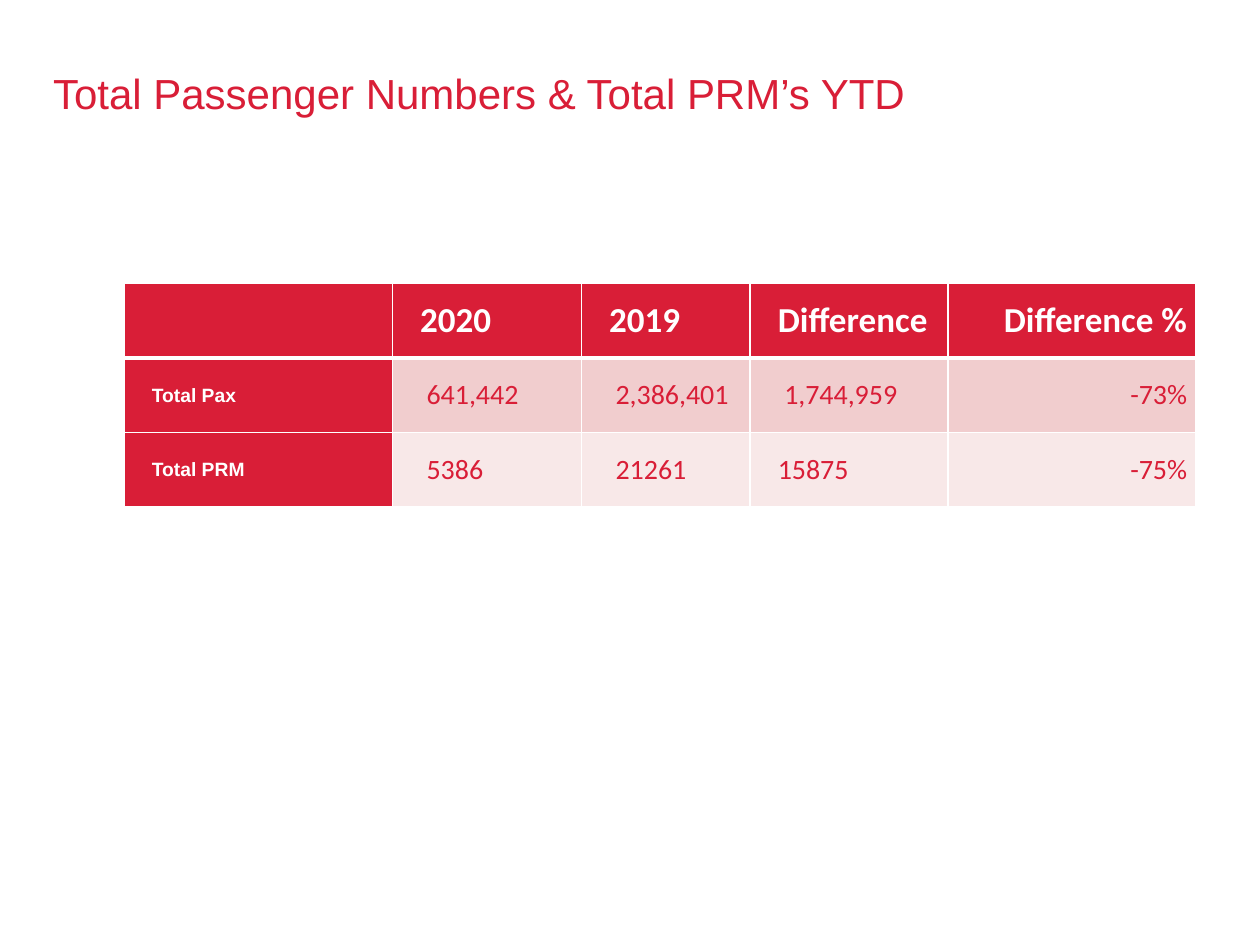
from dataclasses import dataclass

from lxml.etree import SubElement
from pptx import Presentation
from pptx.dml.color import RGBColor as Color
from pptx.enum.text import MSO_ANCHOR as Anchor, PP_ALIGN as Align
from pptx.oxml.ns import qn
from pptx.util import Cm, Pt


@dataclass(frozen=True)
class Theme:
    red: str = "D91E37"
    white: str = "FFFFFF"
    bands: tuple = ("F1CDCE", "F8E8E8")
    title_font: str = "Arial"
    table_font: str = "Calibri"
    title_size: int = 24
    header_size: int = 20
    label_size: int = 11
    value_size: int = 16
    thin_line: int = 1
    thick_line: int = 3


THEME = Theme()
TITLE = "Total Passenger Numbers & Total PRM’s YTD"
HEADERS = ("", "2020", "2019", "Difference", "Difference %")
ROWS = (
    ("Total Pax", "641,442", "2,386,401", "1,744,959", "-73%"),
    ("Total PRM", "5386", "21261", "15875", "-75%"),
)
COLUMN_WIDTHS = (5.41, 3.81, 3.4, 3.99, 5)
ROW_HEIGHT = 1.5
INDENT = 0.38
VALUE_INDENT = 0.51
FLUSH_VALUE = "15875"


def add_run(paragraph, text, font, size, color, bold=False):
    run = paragraph.add_run()
    run.text = text
    run.font.name = font
    run.font.size = Pt(size)
    run.font.bold = bold
    run.font.color.rgb = Color.from_string(color)


def add_title(slide):
    shape = slide.shapes.add_textbox(Cm(1.07), Cm(1.27), Cm(23.29), Cm(2.97))
    frame = shape.text_frame
    frame.word_wrap = True
    frame.margin_left = frame.margin_right = Cm(0)
    frame.margin_top = frame.margin_bottom = Cm(0)
    paragraph = frame.paragraphs[0]
    paragraph.line_spacing = 1.1
    add_run(paragraph, TITLE, THEME.title_font, THEME.title_size, THEME.red)


def set_borders(cell, top, bottom):
    properties = cell._tc.get_or_add_tcPr()
    widths = {"lnL": THEME.thin_line, "lnR": THEME.thin_line, "lnT": top, "lnB": bottom}
    for tag, width in widths.items():
        line = SubElement(properties, qn(f"a:{tag}"), w=str(Pt(width)))
        fill = SubElement(line, qn("a:solidFill"))
        SubElement(fill, qn("a:srgbClr"), val=THEME.white)


def cell_style(row, column):
    if row == 0:
        return THEME.red, (THEME.table_font, THEME.header_size, THEME.white, True)
    if column == 0:
        return THEME.red, (THEME.title_font, THEME.label_size, THEME.white, True)
    return THEME.bands[row - 1], (THEME.table_font, THEME.value_size, THEME.red)


def fill_cell(cell, row, column, text):
    fill, run_style = cell_style(row, column)
    set_borders(
        cell,
        top=THEME.thick_line if row == 1 else THEME.thin_line,
        bottom=THEME.thick_line if row == 0 else THEME.thin_line,
    )
    cell.fill.solid()
    cell.fill.fore_color.rgb = Color.from_string(fill)
    cell.vertical_anchor = Anchor.MIDDLE
    cell.margin_left = cell.margin_right = Cm(0.18)
    cell.margin_top = cell.margin_bottom = Cm(0)
    if not text:
        return
    paragraph = cell.text_frame.paragraphs[0]
    is_last = column == len(HEADERS) - 1
    paragraph.alignment = Align.RIGHT if is_last else Align.LEFT
    is_inset = row > 0 and column > 0 and not is_last and text != FLUSH_VALUE
    indent = VALUE_INDENT if is_inset else INDENT
    paragraph._p.get_or_add_pPr().set("indent", str(Cm(indent)))
    add_run(paragraph, text, *run_style)


def add_passenger_table(slide):
    records = (HEADERS, *ROWS)
    table = slide.shapes.add_table(
        len(records), len(HEADERS), Cm(2.5), Cm(5.72),
        Cm(sum(COLUMN_WIDTHS)), Cm(ROW_HEIGHT * len(records)),
    ).table
    for column, width in zip(table.columns, COLUMN_WIDTHS):
        column.width = Cm(width)
    for row, record in enumerate(records):
        table.rows[row].height = Cm(ROW_HEIGHT)
        for column, text in enumerate(record):
            fill_cell(table.cell(row, column), row, column, text)


def main():
    presentation = Presentation()
    presentation.slide_width = Cm(25.4)
    presentation.slide_height = Cm(19.05)
    slide = presentation.slides.add_slide(presentation.slide_layouts[6])
    add_title(slide)
    add_passenger_table(slide)
    presentation.save("out.pptx")


if __name__ == "__main__":
    main()
